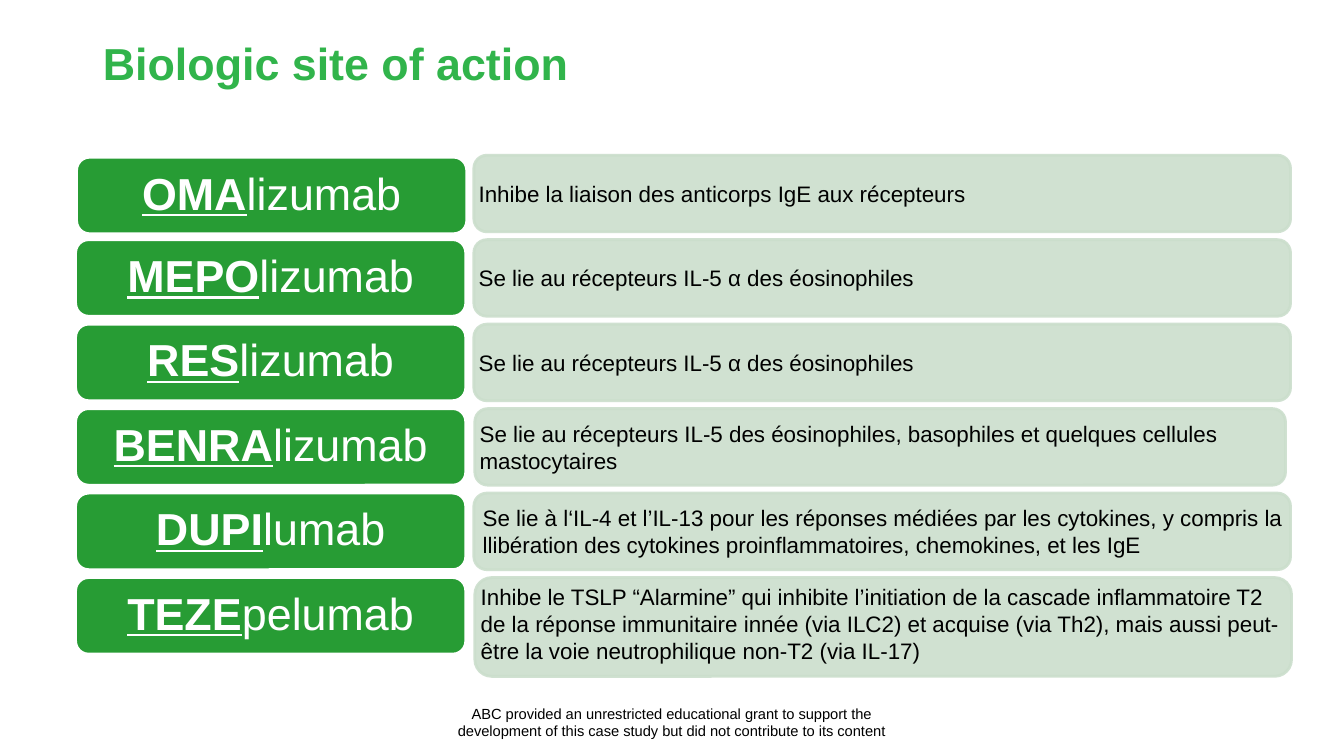
from lxml import etree
from pptx import Presentation
from pptx.dml.color import RGBColor
from pptx.enum.shapes import MSO_SHAPE
from pptx.enum.text import MSO_ANCHOR, MSO_AUTO_SIZE, PP_ALIGN
from pptx.oxml.ns import qn
from pptx.util import Inches, Pt

ROUND = MSO_SHAPE.ROUNDED_RECTANGLE
TOP, MIDDLE = MSO_ANCHOR.TOP, MSO_ANCHOR.MIDDLE
LEFT, CENTER = PP_ALIGN.LEFT, PP_ALIGN.CENTER
LIME = RGBColor(0x31, 0xB4, 0x4B)
GREEN = RGBColor(0x27, 0x9C, 0x34)
PALE = RGBColor(0xCB, 0xDE, 0xCC)
WHITE = RGBColor(0xFF, 0xFF, 0xFF)
BLACK = RGBColor(0, 0, 0)


def style(font, size, color, bold=False):
    font.name = "Arial"
    font.size = Pt(size)
    font.color.rgb = color
    font.bold = bold


def add_card(left, top, width, height, fill, edge, inset):
    card = slide.shapes.add_shape(ROUND, Inches(left), Inches(top),
                                  Inches(width), Inches(height))
    card.adjustments[0] = 0.17
    card.shadow.inherit = False
    card.fill.solid()
    card.fill.fore_color.rgb = fill
    card.line.color.rgb = edge
    card.line.width = Pt(2)
    frame = card.text_frame
    frame.word_wrap = True
    frame.vertical_anchor = MIDDLE
    frame.margin_left = frame.margin_right = Inches(inset)
    frame.margin_top = frame.margin_bottom = Inches(inset)
    return card


prs = Presentation()
prs.slide_width = Inches(13.33)
prs.slide_height = Inches(7.5)
slide = prs.slides.add_slide(prs.slide_layouts[5])

# Title
title = slide.shapes.title
title.left, title.top = Inches(0.92), Inches(0.36)
title.width, title.height = Inches(10.02), Inches(0.85)
frame = title.text_frame
frame.text = "Biologic site of action"
frame.auto_size = MSO_AUTO_SIZE.NONE
frame.vertical_anchor = TOP
para = frame.paragraphs[0]
para.alignment = LEFT
para.line_spacing = 0.9
style(para.runs[0].font, 32, LIME, True)

# Grant note
note = slide.shapes.add_textbox(Inches(4.36), Inches(6.94),
                                Inches(4.61), Inches(0.45))
frame = note.text_frame
frame.word_wrap = True
frame.text = ("ABC provided an unrestricted educational grant to support the "
              "development of this case study but did not contribute to its content")
para = frame.paragraphs[0]
para.alignment = CENTER
style(para.runs[0].font, 10.5, BLACK)

# Drug stem, ending, action; action card left, width, height
drugs = [
    ("OMA", "lizumab", "Inhibe la liaison des anticorps IgE aux récepteurs",
     4.7, 8.1, 0.76),
    ("MEPO", "lizumab", "Se lie au récepteurs IL-5 α des éosinophiles",
     4.7, 8.1, 0.76),
    ("RES", "lizumab", "Se lie au récepteurs IL-5 α des éosinophiles",
     4.7, 8.1, 0.76),
    ("BENRA", "lizumab", "Se lie au récepteurs IL-5 des éosinophiles, basophiles "
     "et quelques cellules mastocytaires", 4.71, 8.04, 0.76),
    ("DUPI", "lumab", "Se lie à l‘IL-4 et l’IL-13 pour les réponses médiées par "
     "les cytokines, y compris la llibération des cytokines proinflammatoires, "
     "chemokines, et les IgE", 4.7, 8.1, 0.76),
    ("TEZE", "pelumab", "Inhibe le TSLP “Alarmine” qui inhibite l’initiation de la "
     "cascade inflammatoire T2 de la réponse immunitaire innée (via ILC2) et "
     "acquise (via Th2), mais aussi peut-être la voie neutrophilique non-T2 "
     "(via IL-17)", 4.71, 8.1, 0.98),
]
FIRST, LAST = 1.54, 5.73
step = (LAST - FIRST) / (len(drugs) - 1)

for row, (stem, ending, action, left, width, height) in enumerate(drugs):
    top = FIRST + row * step

    # Action card, slightly see-through
    card = add_card(left, top, width, height, PALE, PALE, 0.01)
    for color in card._element.spPr.iter(qn("a:srgbClr")):
        etree.SubElement(color, qn("a:alpha")).set("val", "90000")
    frame = card.text_frame
    frame.text = action
    para = frame.paragraphs[0]
    para.alignment = LEFT
    style(para.runs[0].font, 16, BLACK)
    if stem == "DUPI":
        frame.margin_left = Inches(0.05)
    if stem == "TEZE":
        frame.vertical_anchor = TOP

    # Name card; the first one sits a hair to the right and lower
    shift = 0.01 if row == 0 else 0
    card = add_card(0.75 + shift, top + 2 * shift, 3.87, 0.76, GREEN, WHITE, 0.1)
    para = card.text_frame.paragraphs[0]
    para.alignment = CENTER
    para.line_spacing = 0.9
    for text, strong in ((stem, True), (ending, False)):
        run = para.add_run()
        run.text = text
        style(run.font, 32, WHITE, strong)
        run.font.underline = strong

prs.save("out.pptx")
